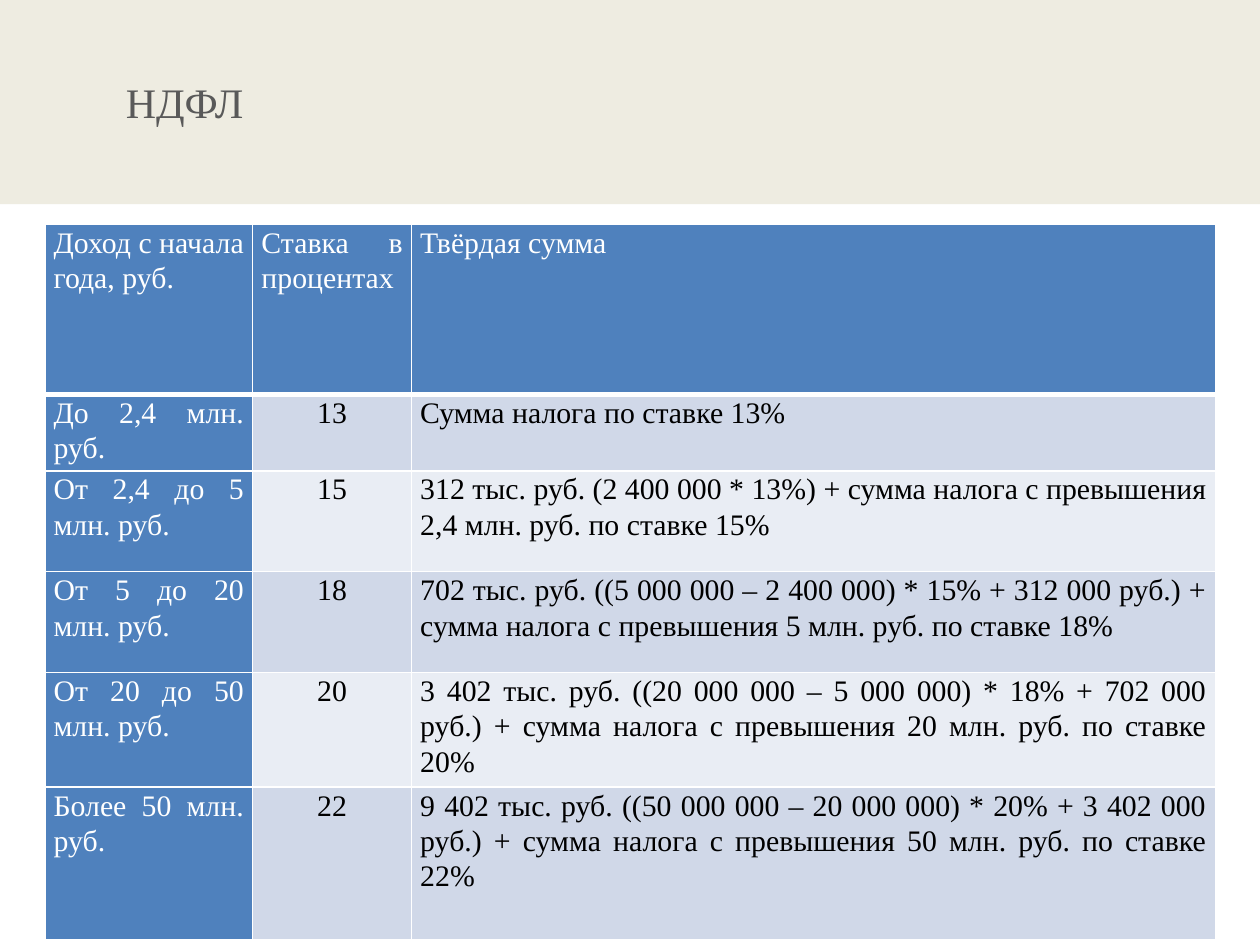
from lxml import etree
from pptx import Presentation
from pptx.dml.color import RGBColor
from pptx.enum import shapes, text
from pptx.oxml import ns
from pptx.util import Pt

BLUE, WHITE, BLACK = "4F81BD", "FFFFFF", "000000"
BANDS = ["D0D8E8", "E9EDF4"]
LEFT, MID = text.PP_ALIGN.LEFT, text.PP_ALIGN.CENTER
JUST = text.PP_ALIGN.JUSTIFY


def rgb(code):
    return RGBColor.from_string(code)


def write(frame, words, size=17, color=BLACK, align=LEFT, line=1.0, after=0):
    frame.word_wrap = True
    par = frame.paragraphs[0]
    par.alignment, par.line_spacing, par.space_after = align, line, Pt(after)
    run = par.add_run()
    run.text = words
    run.font.name, run.font.size = "Times New Roman", Pt(size)
    run.font.color.rgb = rgb(color)


prs = Presentation()
prs.slide_width, prs.slide_height = Pt(720), Pt(540)
slide = prs.slides.add_slide(prs.slide_layouts[6])

# Title band
band = slide.shapes.add_shape(shapes.MSO_SHAPE.RECTANGLE, 0, 0, Pt(720), Pt(116.64))
band.shadow.inherit = False
band.fill.solid()
band.fill.fore_color.rgb = rgb("EEECE1")
band.line.fill.background()

# Title
title = slide.shapes.add_textbox(Pt(64.8), 0, Pt(619.2), Pt(116.64)).text_frame
title.vertical_anchor = text.MSO_ANCHOR.MIDDLE
write(title, "НДФЛ", size=24, color="595959")

# Tax table: income, rate, fixed sum
rows = [
    ("Доход с начала года, руб.", "Ставка в процентах", "Твёрдая сумма"),
    ("До 2,4 млн. руб.", "13", "Сумма налога по ставке 13%"),
    ("От 2,4 до 5 млн. руб.", "15",
     "312 тыс. руб. (2 400 000 * 13%) + сумма налога с превышения "
     "2,4 млн. руб. по ставке 15%"),
    ("От 5 до 20 млн. руб.", "18",
     "702 тыс. руб. ((5 000 000 – 2 400 000) * 15% + 312 000 руб.) + "
     "сумма налога с превышения 5 млн. руб. по ставке 18%"),
    ("От 20 до 50 млн. руб.", "20",
     "3 402 тыс. руб. ((20 000 000 – 5 000 000) * 18% + 702 000 руб.) + "
     "сумма налога с превышения 20 млн. руб. по ставке 20%"),
    ("Более 50 млн. руб.", "22",
     "9 402 тыс. руб. ((50 000 000 – 20 000 000) * 20% + 3 402 000 руб.) + "
     "сумма налога с превышения 50 млн. руб. по ставке 22%"),
]
wides = [118.8, 90.72, 459.36]
highs = [97.2, 42.48, 57.6, 57.6, 57.6, 87.12]
table = slide.shapes.add_table(len(rows), len(wides), Pt(25.6), Pt(128.16),
                               Pt(sum(wides)), Pt(sum(highs))).table
for col, wide in zip(table.columns, wides):
    col.width = Pt(wide)
for row, high in zip(table.rows, highs):
    row.height = Pt(high)

for r, row in enumerate(rows):
    for c, words in enumerate(row):
        cell = table.cell(r, c)
        head = r == 0 or c == 0
        cell.margin_left = cell.margin_right = Pt(5.04)
        cell.margin_top = cell.margin_bottom = 0
        write(cell.text_frame, words, color=WHITE if head else BLACK,
              align=MID if c == 1 and r else JUST, line=1.07, after=8)

        # White borders, placed before the fill
        props = cell._tc.get_or_add_tcPr()
        for side in "LRTB":
            thick = 3 if r == 0 and side == "B" else 1
            edge = etree.SubElement(props, ns.qn("a:ln" + side), w=str(Pt(thick)))
            paint = etree.SubElement(edge, ns.qn("a:solidFill"))
            etree.SubElement(paint, ns.qn("a:srgbClr"), val=WHITE)
        cell.fill.solid()
        cell.fill.fore_color.rgb = rgb(BLUE if head else BANDS[(r - 1) % 2])

prs.save("out.pptx")
